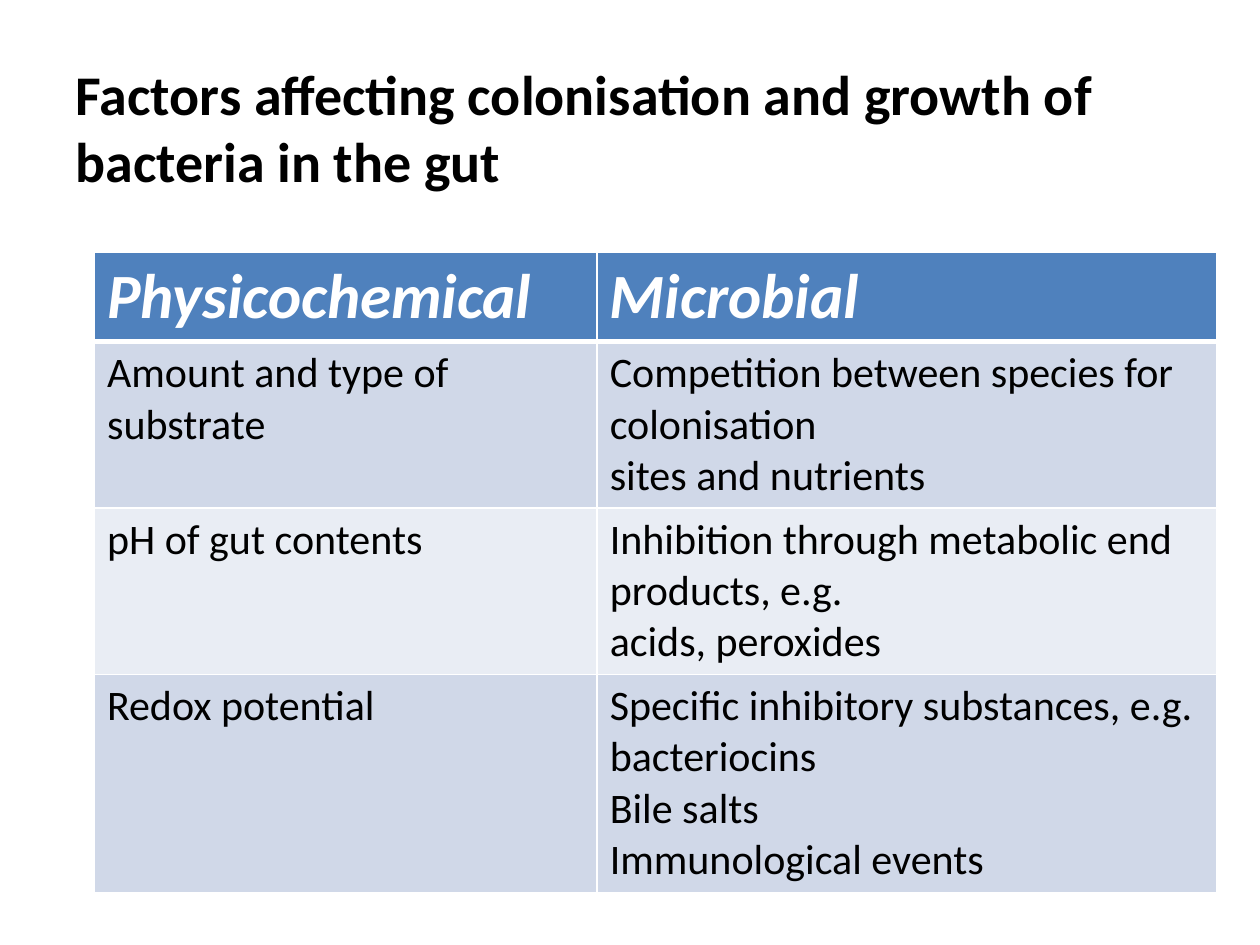
from pptx import Presentation
from pptx.dml.color import RGBColor
from pptx.enum.text import MSO_ANCHOR, PP_ALIGN
from pptx.oxml.ns import qn
from pptx.util import Inches, Pt
from lxml import etree

LEFT = PP_ALIGN.LEFT
TOP = MSO_ANCHOR.TOP
TITLE_ONLY = 5

FONT = "Calibri"
BLACK = RGBColor(0x00, 0x00, 0x00)
WHITE = RGBColor(0xFF, 0xFF, 0xFF)
HEADER_BLUE = RGBColor(0x4F, 0x81, 0xBD)
BAND_COLOURS = (RGBColor(0xD0, 0xD8, 0xE8), RGBColor(0xE9, 0xED, 0xF4))

COLUMN_WIDTHS = (3.99, 4.92)
ROW_HEIGHTS = (0.71, 1.32, 1.32, 1.73)
FACTORS = (
    ("Physicochemical", "Microbial"),
    ("Amount and type of substrate",
     "Competition between species for colonisation\nsites and nutrients"),
    ("pH of gut contents",
     "Inhibition through metabolic end products, e.g.\nacids, peroxides"),
    ("Redox potential",
     "Specific inhibitory substances, e.g. bacteriocins\n"
     "Bile salts\nImmunological events"),
)


class SlideBuilder:
    def __init__(self, deck):
        self.slide = deck.slides.add_slide(deck.slide_layouts[TITLE_ONLY])

    def format_text(self, frame, size, colour, bold=False, italic=False):
        for para in frame.paragraphs:
            para.alignment = LEFT
            for span in para.runs:
                font = span.font
                font.name, font.size = FONT, Pt(size)
                font.bold, font.italic = bold, italic
                font.color.rgb = colour

    def title(self, text, left, top, width, height):
        box = self.slide.shapes.title
        box.left, box.top = Inches(left), Inches(top)
        box.width, box.height = Inches(width), Inches(height)
        frame = box.text_frame
        frame.text = text
        frame.word_wrap = True
        frame.vertical_anchor = TOP
        self.format_text(frame, 32, BLACK, bold=True)

    def border(self, cell, side, points):
        properties = cell._tc.get_or_add_tcPr()
        line = etree.SubElement(properties, qn(f"a:ln{side}"), w=str(Pt(points)))
        fill = etree.SubElement(line, qn("a:solidFill"))
        etree.SubElement(fill, qn("a:srgbClr"), val=str(WHITE))

    def table(self, rows, left, top):
        """Add a table with a heading row and banded rows below it."""
        table = self.slide.shapes.add_table(
            len(rows), len(COLUMN_WIDTHS), Inches(left), Inches(top),
            Inches(sum(COLUMN_WIDTHS)), Inches(sum(ROW_HEIGHTS))).table
        for column, width in zip(table.columns, COLUMN_WIDTHS):
            column.width = Inches(width)
        for row, height in zip(table.rows, ROW_HEIGHTS):
            row.height = Inches(height)

        for index, texts in enumerate(rows):
            heading = index == 0
            for column, text in enumerate(texts):
                cell = table.cell(index, column)
                cell.text_frame.text = text
                for side in "LRTB":
                    beside_heading = (index, side) in ((0, "B"), (1, "T"))
                    self.border(cell, side, 3 if beside_heading else 1)
                cell.fill.solid()
                if heading:
                    cell.fill.fore_color.rgb = HEADER_BLUE
                    self.format_text(cell.text_frame, 36, WHITE, True, True)
                else:
                    cell.fill.fore_color.rgb = BAND_COLOURS[(index - 1) % 2]
                    self.format_text(cell.text_frame, 24, BLACK)


def main():
    deck = Presentation()
    deck.slide_width, deck.slide_height = Inches(10), Inches(7.5)
    page = SlideBuilder(deck)
    page.title("Factors affecting colonisation and growth of bacteria in the gut",
               0.5, 0.42, 9.5, 1.18)
    page.table(FACTORS, 0.75, 2)
    deck.save("out.pptx")


if __name__ == "__main__":
    main()
